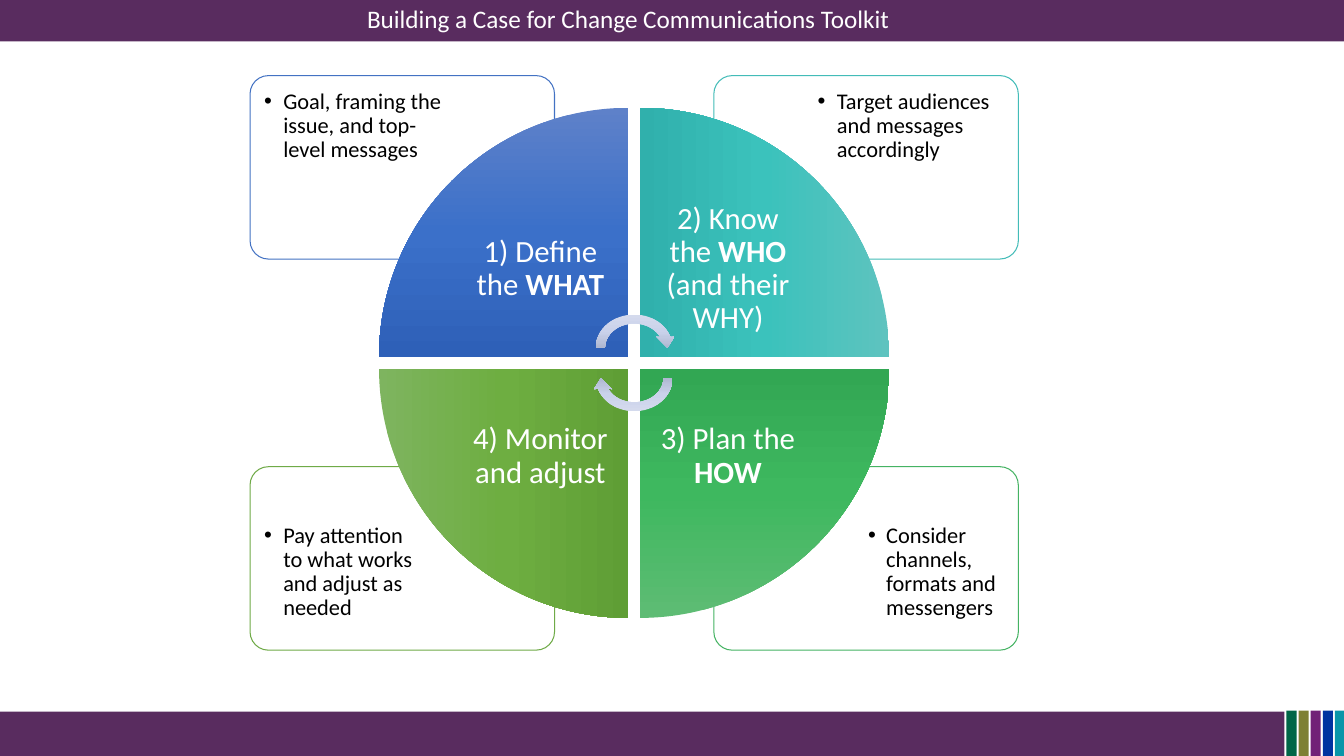
"""Build a slide with a four-step communications cycle and a note for each step."""
from dataclasses import dataclass
from copy import deepcopy
from math import cos, sin, radians

from lxml.etree import SubElement
from pptx import Presentation
from pptx.dml.color import RGBColor
from pptx.enum.shapes import MSO_SHAPE as Shape
from pptx.enum.text import MSO_ANCHOR as Anchor, PP_ALIGN as Align
from pptx.oxml.ns import qn
from pptx.util import Inches, Pt

TITLE = "Building a Case for Change Communications Toolkit"
STEPS = [
    {"side": (-1, -1), "turn": 0, "label": ("1) Define the ", "WHAT"),
     "note": "Goal, framing the issue, and top-level messages", "indent": (0.19, -0.19),
     "line": "4372C3", "shades": ("5E81C9", "3B70C9", "2E60B8")},
    {"side": (1, -1), "turn": 90, "label": ("2) Know the ", "WHO", " (and their WHY)"),
     "note": "Target audiences and messages accordingly", "indent": (0.19, -0.19),
     "line": "43BCB8", "shades": ("5EC3BF", "3BC2BC", "30B0AC")},
    {"side": (1, 1), "turn": 180, "label": ("3) Plan the ", "HOW"),
     "note": "Consider channels, formats and messengers", "indent": (0.68, -0.18),
     "line": "45B363", "shades": ("5EBC74", "3EB85F", "32A753")},
    {"side": (-1, 1), "turn": 270, "label": ("4) Monitor and adjust",),
     "note": "Pay attention\vto what works and adjust as needed", "indent": (0.19, -0.19),
     "line": "6FAA47", "shades": ("7EB45F", "6EAE41", "5F9E35")},
]


@dataclass(frozen=True)
class Theme:
    font: str = "Calibri"
    title_size: int = 18
    label_size: int = 22
    note_size: int = 16
    white: str = "FFFFFF"
    black: str = "000000"
    band: str = "592C5F"
    stripes: tuple = ("006647", "7E8034", "712177", "0033A0", "0996A9")
    arrow: tuple = ("D4DAED", "CAD2EB", "AFB8D1")


THEME = Theme()
WIDTH, HEIGHT = 13.33, 7.5
CENTER = (6.29, 3.6)
QUARTER = {"near": (0.06, 0.06), "size": (2.47, 2.47)}
LABEL = {"near": (0.06, 0.06), "size": (1.74, 1.74)}
CARD = {"near": (0.79, 1.03), "size": (3.02, 1.82)}
NOTE = {"near": (1.73, 1.51), "size": (2.03, 1.29)}
STRIPE_STEP, STRIPE_WIDTH = 0.12, 0.1


def place(side, near, size):
    """Mirror a box about the cycle's center."""
    corner = [middle + gap if sign > 0 else middle - gap - length
              for middle, sign, gap, length in zip(CENTER, side, near, size)]
    return [Inches(value) for value in (*corner, *size)]


def apply(target, formats):
    """Set each format value on the target."""
    for name, value in formats.items():
        setattr(target, name, value)


def style(runs, size, color):
    """Give runs the theme font with a size and colour."""
    for run in runs:
        apply(run.font, {"name": THEME.font, "size": Pt(size)})
        run.font.color.rgb = RGBColor.from_string(color)


def paint(shape, color, line=None):
    """Fill a shape with one colour and an optional outline."""
    shape.shadow.inherit = False
    shape.fill.solid()
    shape.fill.fore_color.rgb = RGBColor.from_string(color)
    if line:
        shape.line.color.rgb = RGBColor.from_string(line)
        shape.line.width = Pt(0.75)
    else:
        shape.line.fill.background()


def shade(shape, colors):
    """Fill a shape with a three-stop gradient from top to bottom."""
    shape.shadow.inherit = False
    shape.line.fill.background()
    shape.fill.gradient()
    shape.fill.gradient_angle = 270
    stops = shape._element.spPr.find(qn("a:gradFill")).find(qn("a:gsLst"))
    stops.insert(1, deepcopy(stops[0]))
    for stop, color, position in zip(shape.fill.gradient_stops, colors, (0, 0.5, 1)):
        stop.color.rgb = RGBColor.from_string(color)
        stop.position = position


def add_bar(shapes, left, top, width, height, color):
    """Add a plain bar."""
    bar = shapes.add_shape(Shape.RECTANGLE, *map(Inches, (left, top, width, height)))
    paint(bar, color)


def add_text(shapes, box, inset, anchor):
    """Add an empty wrapped text box and return its paragraph."""
    frame = shapes.add_textbox(*box).text_frame
    margins = {f"margin_{edge}": Inches(inset) for edge in ("left", "top", "right", "bottom")}
    apply(frame, {"word_wrap": True, "vertical_anchor": anchor, **margins})
    paragraph = frame.paragraphs[0]
    paragraph.line_spacing = 0.9
    return paragraph


def add_card(shapes, step):
    """Add a rounded card with its bulleted note."""
    card = shapes.add_shape(Shape.ROUNDED_RECTANGLE, *place(step["side"], **CARD))
    card.adjustments[0] = 0.1
    paint(card, THEME.white, step["line"])
    white = card._element.spPr.find(qn("a:solidFill"))[0]
    SubElement(white, qn("a:alpha"), val="89000")

    note = add_text(shapes, place(step["side"], **NOTE), 0.09, Anchor.TOP)
    note.text = step["note"]
    style(note.runs, THEME.note_size, THEME.black)
    properties = note._p.get_or_add_pPr()
    for name, length in zip(("marL", "indent"), step["indent"]):
        properties.set(name, str(Inches(length)))
    bullet_color = SubElement(properties, qn("a:buClr"))
    SubElement(bullet_color, qn("a:srgbClr"), val=THEME.black)
    SubElement(properties, qn("a:buFont"), typeface="Arial")
    SubElement(properties, qn("a:buChar"), char="•")


def add_quarter(shapes, step):
    """Add a quarter of the cycle with its label."""
    quarter = shapes.add_shape(Shape.PIE_WEDGE, *place(step["side"], **QUARTER))
    quarter.rotation = step["turn"]
    shade(quarter, step["shades"])
    label = add_text(shapes, place(step["side"], **LABEL), 0.17, Anchor.MIDDLE)
    label.alignment = Align.CENTER
    for index, words in enumerate(step["label"]):
        run = label.add_run()
        apply(run, {"text": words})
        run.font.bold = index % 2 == 1
    style(label.runs, THEME.label_size, THEME.white)


def arc(radius_x, radius_y, start, end, steps=24):
    """Return points along an ellipse above the center."""
    angles = [radians(start + (end - start) * i / steps) for i in range(steps + 1)]
    return [(CENTER[0] + radius_x * cos(a), CENTER[1] - 0.15 - radius_y * sin(a))
            for a in angles]


def add_turn_arrow(shapes, rotation):
    """Add one curved arrow, turned about the center."""
    head = [(6.69, 3.34), (6.62, 3.45), (6.51, 3.34)]
    outline = arc(0.38, 0.33, 180, 19) + head + arc(0.29, 0.24, 26, 180)
    points = [(Inches(x), Inches(y)) for x, y in outline]
    builder = shapes.build_freeform(*points[0])
    builder.add_line_segments(points[1:], close=True)
    arrow = builder.convert_to_shape()
    if rotation:
        arrow.left = Inches(2 * CENTER[0]) - arrow.left - arrow.width
        arrow.top = Inches(2 * CENTER[1]) - arrow.top - arrow.height
        arrow.rotation = rotation
    shade(arrow, THEME.arrow)


def add_title(shapes):
    """Place the title over the top band."""
    title = shapes.title
    shapes._spTree.append(title._element)
    apply(title, {"left": Inches(3.54), "top": Inches(-0.02),
                  "width": Inches(WIDTH / 2), "height": Inches(0.4)})
    apply(title.text_frame, {"text": TITLE, "word_wrap": True,
                             "vertical_anchor": Anchor.MIDDLE})
    heading = title.text_frame.paragraphs[0]
    heading.alignment = Align.LEFT
    style(heading.runs, THEME.title_size, THEME.white)


def main():
    """Build and save the slide."""
    deck = Presentation()
    apply(deck, {"slide_width": Inches(WIDTH), "slide_height": Inches(HEIGHT)})
    shapes = deck.slides.add_slide(deck.slide_layouts[5]).shapes
    add_bar(shapes, 0, 7.06, 12.74, 0.44, THEME.band)
    for index, color in enumerate(THEME.stripes):
        add_bar(shapes, 12.76 + index * STRIPE_STEP, 7.05, STRIPE_WIDTH, 0.45, color)
    add_bar(shapes, 0, 0, WIDTH, 0.41, THEME.band)
    add_title(shapes)
    for add_part in (add_card, add_quarter):
        for step in STEPS:
            add_part(shapes, step)
    for rotation in (0, 180):
        add_turn_arrow(shapes, rotation)
    deck.save("out.pptx")


if __name__ == "__main__":
    main()
